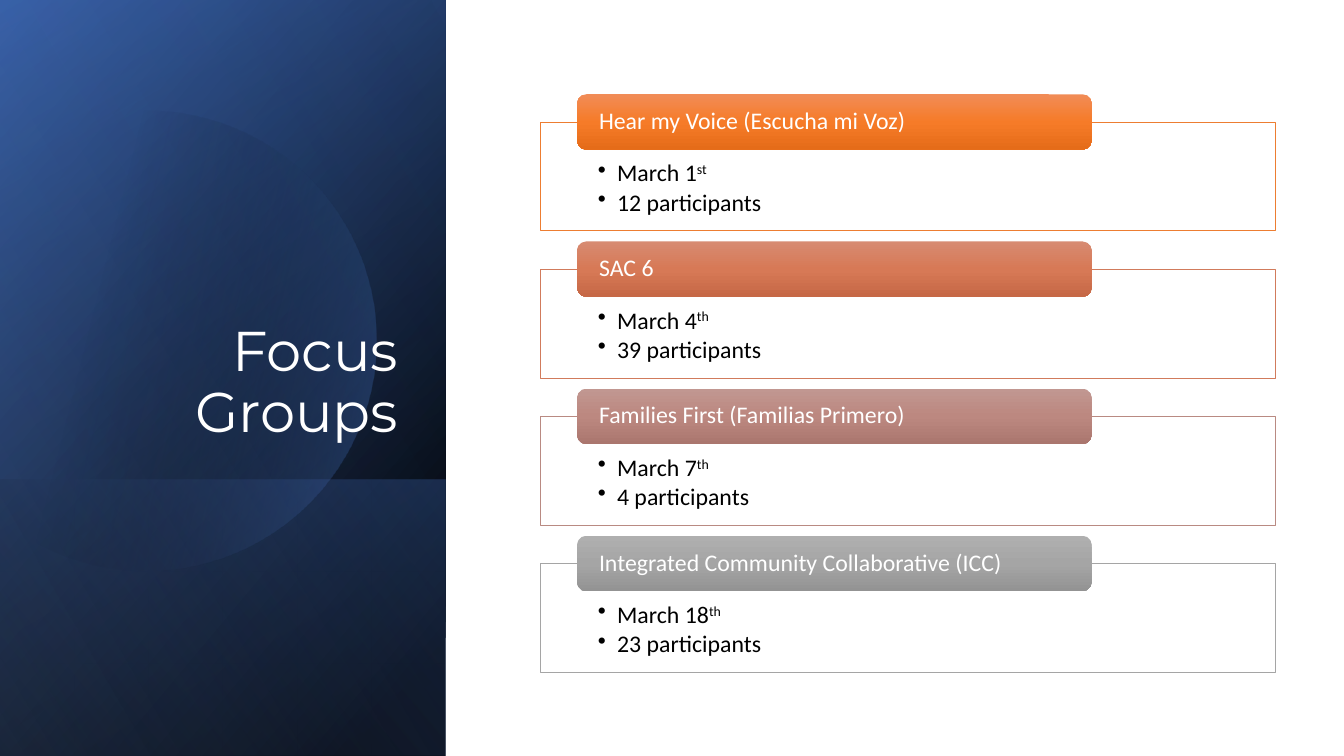
"""Build the Focus Groups slide: a dark title panel beside four session cards."""
from math import cos, sin, acos, degrees, radians

from pptx import Presentation
from pptx.dml.color import RGBColor
from pptx.enum.shapes import MSO_SHAPE as Shape
from pptx.enum.text import MSO_ANCHOR as Anchor, MSO_AUTO_SIZE as AutoSize, PP_ALIGN as Align
from pptx.oxml import parse_xml
from pptx.oxml.ns import nsdecls, qn
from pptx.util import Inches, Pt

COLORS = {"white": "FFFFFF", "black": "000000", "navy": "2F5597",
          "blue": "4472C4", "pale": "8FAADC"}
WIDTH, HEIGHT = 13.33, 7.5
PANEL_WIDTH = 4.42
CARD_LEFT, CARD_TOP, CARD_WIDTH, CARD_HEIGHT = 5.36, 1.21, 7.29, 1.08
CARD_PITCH = 1.46
HEADER_WIDTH, HEADER_HEIGHT = CARD_WIDTH * 0.7, 0.55
HEADER_LEFT = CARD_LEFT + CARD_WIDTH * 0.05


def fill_gradient(shape, stops, angle):
    """Fill a borderless shape with (position, colour, opacity) stops, in percent."""
    shape.shadow.inherit = False
    shape.line.fill.background()
    shape.fill.background()
    marks = "".join(
        f'<a:gs pos="{position * 1000}"><a:srgbClr val="{color}">'
        f'<a:alpha val="{opacity * 1000}"/></a:srgbClr></a:gs>'
        for position, color, opacity in stops)
    gradient = parse_xml(
        f'<a:gradFill {nsdecls("a")} rotWithShape="1"><a:gsLst>{marks}</a:gsLst>'
        f'<a:lin ang="{angle * 60000}" scaled="0"/></a:gradFill>')
    properties = shape.element.spPr
    properties.replace(properties.find(qn("a:noFill")), gradient)


def style_text(para, size, font, color, space_after=0):
    """Set the font and spacing of one paragraph."""
    para.font.size, para.font.name = Pt(size), font
    para.font.color.rgb = RGBColor.from_string(color)
    para.line_spacing, para.space_after = 0.9, Pt(space_after)


deck = Presentation()
deck.slide_width, deck.slide_height = Inches(WIDTH), Inches(HEIGHT)
slide = deck.slides.add_slide(deck.slide_layouts[5])
shapes = slide.shapes

black, blue = COLORS["black"], COLORS["blue"]
sheen = (0, [(0, black, 0), (99, COLORS["pale"], 11)], 150)
layers = [
    (0, [(8, black, 100), (100, COLORS["navy"], 100)], 220),
    (0, [(0, black, 0), (99, blue, 46)], 240),
    (4.76, [(2, blue, 29), (100, black, 30)], 140),
]
for top, stops, angle in layers + [sheen]:
    if top == sheen[0] and stops is sheen[1]:
        center_x, center_y, radius = 1.45, 3.38, 2.28
        limit = degrees(acos(-center_x / radius))
        turns = [radians(limit * (step / 60 - 1)) for step in range(121)]
        points = [(Inches(center_x + radius * cos(turn)), Inches(center_y + radius * sin(turn)))
                  for turn in turns]
        outline = shapes.build_freeform(*points[0])
        outline.add_line_segments(points[1:], close=True)
        disc = outline.convert_to_shape()
        fill_gradient(disc, [(29, black, 0), (100, blue, 43)], 14)
    panel = shapes.add_shape(Shape.RECTANGLE, 0, Inches(top),
                             Inches(PANEL_WIDTH), Inches(HEIGHT - top))
    fill_gradient(panel, stops, angle)

title = shapes.title
title.left, title.top, title.width, title.height = map(Inches, (0.64, 1.84, 3.41, 2.62))
title.text_frame.text = "Focus Groups"
title.text_frame.word_wrap = True
title.text_frame.auto_size = AutoSize.NONE
title.text_frame.vertical_anchor = Anchor.BOTTOM
title_para = title.text_frame.paragraphs[0]
title_para.alignment = Align.RIGHT
style_text(title_para, 40, "Montserrat", COLORS["white"])
shapes.element.append(title.element)

sessions = [
    ("Hear my Voice (Escucha mi Voz)", "March 1", "st", 12,
     "ED7D31", ("F18C57", "F67B28", "E56C19")),
    ("SAC 6", "March 4", "th", 39,
     "D17B5C", ("D78B72", "D77956", "C66846")),
    ("Families First (Familias Primero)", "March 7", "th", 4,
     "B98A82", ("C19791", "BC8880", "AA766E")),
    ("Integrated Community Collaborative (ICC)", "March 18", "th", 23,
     "A5A5A5", ("AFAFAF", "A5A5A5", "939393")),
]
for row, (name, date, suffix, count, border, shades) in enumerate(sessions):
    top = CARD_TOP + row * CARD_PITCH
    card = shapes.add_shape(Shape.RECTANGLE, Inches(CARD_LEFT), Inches(top),
                            Inches(CARD_WIDTH), Inches(CARD_HEIGHT))
    card.shadow.inherit = False
    card.fill.solid()
    card.fill.fore_color.rgb = RGBColor.from_string(COLORS["white"])
    card.line.color.rgb = RGBColor.from_string(border)
    card.line.width = Pt(0.5)
    frame = card.text_frame
    frame.word_wrap = True
    frame.vertical_anchor = Anchor.TOP
    frame.margin_left = frame.margin_right = Inches(0.57)
    frame.margin_top, frame.margin_bottom = Inches(0.39), Inches(0.13)
    date_para, count_para = frame.paragraphs[0], frame.add_paragraph()
    date_para.add_run().text = date
    span = date_para.add_run()
    span.text = suffix
    span.font._element.set("baseline", "30000")
    count_para.add_run().text = f"{count} participants"
    for para in frame.paragraphs:
        para.alignment = Align.LEFT
        style_text(para, 17, "Calibri", black, 2.5)
        properties = para._p.get_or_add_pPr()
        properties.set("marL", str(Inches(0.19)))
        properties.set("indent", str(-Inches(0.19)))
        bullet = parse_xml(f'<a:buChar {nsdecls("a")} char="•"/>')
        properties.find(qn("a:defRPr")).addprevious(bullet)

    header = shapes.add_shape(Shape.ROUNDED_RECTANGLE, Inches(HEADER_LEFT),
                              Inches(top - HEADER_HEIGHT / 2),
                              Inches(HEADER_WIDTH), Inches(HEADER_HEIGHT))
    fill_gradient(header, [(50 * step, shade, 100) for step, shade in enumerate(shades)], 90)
    frame = header.text_frame
    frame.word_wrap = True
    frame.vertical_anchor = Anchor.MIDDLE
    frame.margin_left = frame.margin_right = Inches(0.19)
    frame.margin_top = frame.margin_bottom = 0
    frame.text = name
    frame.paragraphs[0].alignment = Align.LEFT
    style_text(frame.paragraphs[0], 17, "Calibri", COLORS["white"])

deck.save("out.pptx")
